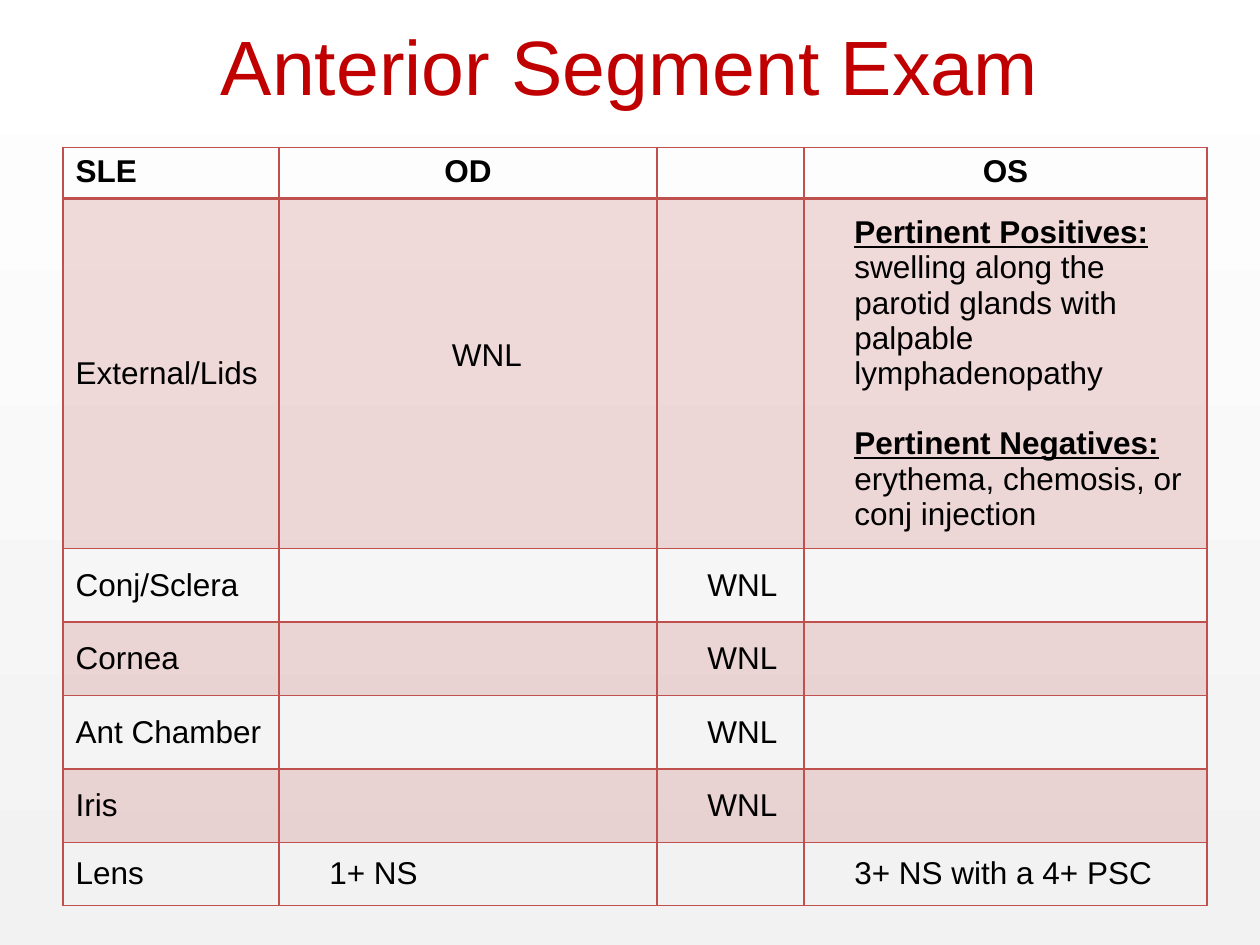
from lxml.etree import SubElement
from pptx import Presentation
from pptx.dml.color import RGBColor
from pptx.enum.text import MSO_ANCHOR as Anchor, PP_ALIGN as Align
from pptx.oxml.ns import qn
from pptx.util import Pt

RED, LINE, BLACK = "C00000", "C0504D", "000000"
FONT = "Arial"
TITLE = "Anterior Segment Exam"
HEADER = ["SLE", "OD", "", "OS"]
FINDINGS = [  # bold underlined label, then its text
    ("Pertinent Positives:", " swelling along the parotid glands with palpable lymphadenopathy"),
    ("Pertinent Negatives:", " erythema, chemosis, or conj injection"),
]
ROWS = [
    ["External/Lids", "WNL", "", FINDINGS],
    ["Conj/Sclera", "", "WNL", ""],
    ["Cornea", "", "WNL", ""],
    ["Ant Chamber", "", "WNL", ""],
    ["Iris", "", "WNL", ""],
    ["Lens", "1+ NS", "", "3+ NS with a 4+ PSC"],
]
COL_WIDTHS = [123.4, 216, 84, 230.4]
ROW_HEIGHTS = [29.2, 188.6, 42, 42, 42, 42, 36]
LEFT, TOP = 36, 84.2
INDENT, LINE_HEIGHT = 28.8, 20


def rgb(hex_color):
    return RGBColor.from_string(hex_color)


def style(r, size=18, color=BLACK, bold=False, underline=False):
    f = r.font
    f.name, f.size, f.bold, f.underline = FONT, Pt(size), bold, underline
    f.color.rgb = rgb(color)


def add_borders(cell, bottom):
    tc_pr = cell._tc.get_or_add_tcPr()
    for side, width in (("L", 1), ("R", 1), ("T", 1), ("B", bottom)):
        ln = SubElement(tc_pr, qn(f"a:ln{side}"), w=str(Pt(width)))
        SubElement(SubElement(ln, qn("a:solidFill")), qn("a:srgbClr"), val=LINE)


def tint(cell):
    """Fill a cell with the line colour at 20 % opacity."""
    cell.fill.solid()
    cell.fill.fore_color.rgb = rgb(LINE)
    color = cell._tc.tcPr.find(f"{qn('a:solidFill')}/{qn('a:srgbClr')}")
    SubElement(color, qn("a:alpha"), val="20000")


def write(cell, content, bold):
    tf = cell.text_frame
    if isinstance(content, str):
        tf.text = content
        for r in tf.paragraphs[0].runs:
            style(r, bold=bold)
        return
    for i, (label, text) in enumerate(content):
        p = tf.add_paragraph() if i else tf.paragraphs[0]
        if i:
            p.space_before = Pt(LINE_HEIGHT)
        for part, strong in ((label, True), (text, False)):
            r = p.add_run()
            r.text = part
            style(r, bold=strong, underline=strong)


def add_exam_table(s):
    grid = [HEADER] + ROWS
    table = s.shapes.add_table(len(grid), len(HEADER), Pt(LEFT), Pt(TOP),
                               Pt(sum(COL_WIDTHS)), Pt(sum(ROW_HEIGHTS))).table
    table.horz_banding = table.first_row = False
    for column, width in zip(table.columns, COL_WIDTHS):
        column.width = Pt(width)
    for i, (row, height) in enumerate(zip(grid, ROW_HEIGHTS)):
        table.rows[i].height = Pt(height)
        for j, content in enumerate(row):
            cell = table.cell(i, j)
            header = i == 0
            add_borders(cell, 2 if header else 1)
            if i % 2:
                tint(cell)
            else:
                cell.fill.background()
            write(cell, content, header)
            if not header:
                cell.vertical_anchor = Anchor.MIDDLE
            if j and content and not header:
                cell.margin_left = Pt(INDENT)
            if j == 2:
                cell.margin_right = 0
            if j and (header or (i, j) == (1, 1)):
                cell.text_frame.paragraphs[0].alignment = Align.CENTER
    table.cell(1, 1).margin_bottom = Pt(3.6 + LINE_HEIGHT)


def add_title(s):
    tf = s.shapes.add_textbox(Pt(36), Pt(-8), Pt(648), Pt(90)).text_frame
    tf.word_wrap = True
    tf.vertical_anchor = Anchor.MIDDLE
    tf.text = TITLE
    p = tf.paragraphs[0]
    p.alignment = Align.CENTER
    style(p.runs[0], 44, RED)


def main():
    prs = Presentation()
    prs.slide_width, prs.slide_height = Pt(720), Pt(540)
    s = prs.slides.add_slide(prs.slide_layouts[6])
    fill = s.background.fill
    fill.gradient()
    fill.gradient_angle = 90
    for stop, color in zip(fill.gradient_stops, ("F2F2F2", "FFFFFF")):
        stop.color.rgb = rgb(color)
    add_title(s)
    add_exam_table(s)
    prs.save("out.pptx")


if __name__ == "__main__":
    main()
